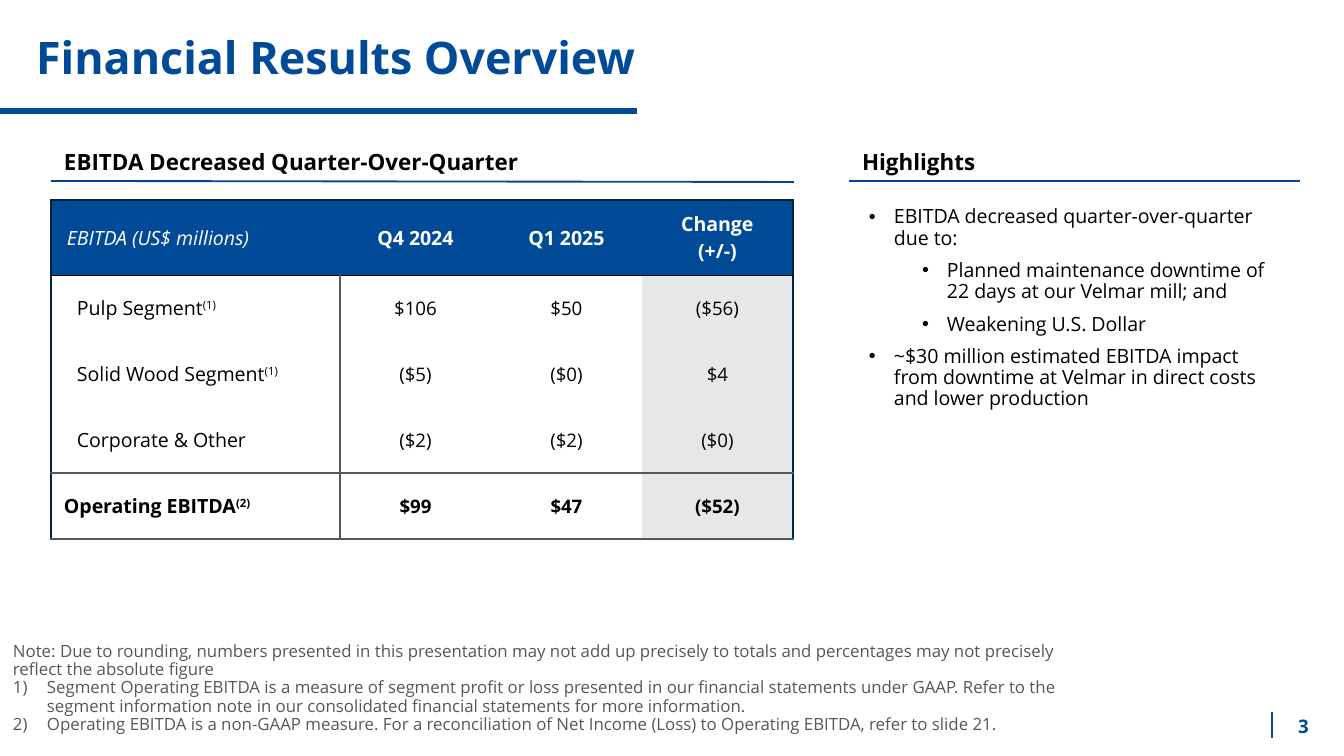
from lxml.etree import SubElement
from pptx import Presentation
from pptx.dml.color import RGBColor
from pptx.enum.shapes import MSO_CONNECTOR
from pptx.enum.text import MSO_ANCHOR, MSO_AUTO_SIZE, PP_ALIGN
from pptx.oxml.ns import qn
from pptx.util import Emu, Pt

FONT = "Open Sans"
BLUE, RULE, NAVY = "004A97", "004894", "00253D"
GREY, PALE, BLACK, WHITE = "555759", "E6E7E8", "000000", "FFFFFF"

HEAD = ["EBITDA (US$ millions)", "Q4 2024", "Q1 2025", "Change\n(+/-)"]
# label, footnote mark, values
ROWS = [
    ("Pulp Segment", "(1)", "$106", "$50", "($56)"),
    ("Solid Wood Segment", "(1)", "($5)", "($0)", "$4"),
    ("Corporate & Other", "", "($2)", "($2)", "($0)"),
    ("Operating EBITDA", "(2)", "$99", "$47", "($52)"),
]
POINTS = [
    (0, "EBITDA decreased quarter-over-quarter due to:"),
    (1, "Planned maintenance downtime of 22 days at our Velmar mill; and"),
    (1, "Weakening U.S. Dollar"),
    (0, "~$30 million estimated EBITDA impact from downtime at Velmar in direct "
        "costs and lower production"),
]
NOTE = ("Note: Due to rounding, numbers presented in this presentation may not add up "
        "precisely to totals and percentages may not precisely reflect the absolute figure")
NOTES = [
    "Segment Operating EBITDA is a measure of segment profit or loss presented in our "
    "financial statements under GAAP. Refer to the segment information note in our "
    "consolidated financial statements for more information.",
    "Operating EBITDA is a non-GAAP measure. For a reconciliation of Net Income (Loss) "
    "to Operating EBITDA, refer to slide 21.",
]


def px(n):
    return Emu(round(n * 914400 / 134.4))


def rgb(code):
    return RGBColor.from_string(code)


def style(para, size, color, bold=False, italic=False):
    font = para.font
    font.name, font.size = FONT, Pt(size)
    font.bold, font.italic = bold, italic
    font.color.rgb = rgb(color)


def place(shape, box):
    shape.left, shape.top, shape.width, shape.height = map(px, box)


def frame(shape, x=13, y=7, anchor=MSO_ANCHOR.TOP):
    """Set insets, wrapping and anchor, and return the text frame."""
    text = shape.text_frame
    text.word_wrap, text.auto_size = True, MSO_AUTO_SIZE.NONE
    text.margin_left = text.margin_right = px(x)
    text.margin_top = text.margin_bottom = px(y)
    text.vertical_anchor = anchor
    return text


def label(slide, box, words, size, color, bold=True, **inset):
    text = frame(slide.shapes.add_textbox(*map(px, box)), **inset)
    para = text.paragraphs[0]
    para.text = words
    style(para, size, color, bold)
    return text


def line(slide, start, end, color, width):
    item = slide.shapes.add_connector(MSO_CONNECTOR.STRAIGHT, *map(px, start + end))
    item.line.color.rgb, item.line.width = rgb(color), Pt(width)
    SubElement(item._element.spPr, qn("a:effectLst"))


def bullet(para, left, hang, color, kind, **attrs):
    props = para._p.get_or_add_pPr()
    props.set("marL", str(px(left)))
    props.set("indent", str(-px(hang)))
    SubElement(SubElement(props, qn("a:buClr")), qn("a:srgbClr"), val=color)
    SubElement(props, qn("a:buFont"), typeface="Arial" if kind == "buChar" else FONT)
    SubElement(props, qn("a:" + kind), **attrs)


def title(slide, box, words):
    x, y, w, h = box
    shape = slide.shapes.title
    place(shape, box)
    para = frame(shape, y=11).paragraphs[0]
    para.text, para.alignment = words, PP_ALIGN.LEFT
    style(para, 24, BLUE, True)
    line(slide, (0, y + 92), (637, y + 92), BLUE, 3)


def section(slide, box, words, drop=0):
    """Heading over a thin rule; drop lowers the rule's right end."""
    x, y, w, h = box
    label(slide, (x, y, w, h), words, 12, BLACK)
    line(slide, (x, y + h), (x + w, y + h + drop), RULE, 1)


def edge(props, side, pen):
    ln = SubElement(props, qn("a:ln" + side))
    if pen:
        color, width = pen
        ln.set("w", str(Pt(width)))
        SubElement(SubElement(ln, qn("a:solidFill")), qn("a:srgbClr"), val=color)
    else:
        ln.set("w", "0")
        SubElement(ln, qn("a:noFill"))


def borders(cell, row, col):
    navy, grey, thin = (NAVY, 1), (GREY, 1), (BLACK, 0.5)
    across = [navy, thin, None, None, grey, grey]
    down = [navy, grey if row else None, None, None, navy]
    props = cell._tc.get_or_add_tcPr()
    pens = (down[col], down[col + 1], across[row], across[row + 1])
    for side, pen in zip("LRTB", pens):
        edge(props, side, pen)


def fill(cell, row, col):
    if row == 0 or col > 1:
        cell.fill.solid()
        cell.fill.fore_color.rgb = rgb(BLUE if row == 0 else PALE if col == 3 else WHITE)
    else:
        cell.fill.background()


def results(slide, box):
    x, y, w, h = box
    count, first, top = len(ROWS), 289, 75
    table = slide.shapes.add_table(count + 1, 4, *map(px, box)).table
    table.first_row = table.horz_banding = False
    for i, col in enumerate(table.columns):
        col.width = px(first if i == 0 else (w - first) / 3)
    for i, row in enumerate(table.rows):
        row.height = px(top if i == 0 else (h - top) / count)

    grid = [HEAD] + [[name, *values] for name, _, *values in ROWS]
    for r, cells in enumerate(grid):
        for c, words in enumerate(cells):
            cell = table.cell(r, c)
            borders(cell, r, c)
            fill(cell, r, c)
            cell.margin_left = cell.margin_right = cell.margin_top = cell.margin_bottom = 0
            cell.vertical_anchor = MSO_ANCHOR.MIDDLE
            cell.text = words
            if c == 0:
                cell.margin_left = px(16 if r == 0 else 13 if r == count else 26)
                if r and ROWS[r - 1][1]:
                    run = cell.text_frame.paragraphs[0].add_run()
                    run.text = ROWS[r - 1][1]
                    run._r.get_or_add_rPr().set("baseline", "30000")
            for para in cell.text_frame.paragraphs:
                para.alignment = PP_ALIGN.CENTER if c else PP_ALIGN.LEFT
                style(para, 10 if r and c else 10.5, BLACK if r else WHITE,
                      bold=r == count or (r == 0 and c > 0), italic=r == c == 0)


def points(slide, box):
    shape = slide.placeholders[1]
    place(shape, box)
    text = frame(shape)
    for i, (level, words) in enumerate(POINTS):
        para = text.add_paragraph() if i else text.paragraphs[0]
        para.text, para.level = words, level
        bullet(para, 25 + 53 * level, 25, BLACK, "buChar", char="•")
        para.line_spacing, para.space_before, para.space_after = 0.9, Pt(0), Pt(6)
        style(para, 10.5, BLACK)


def notes(slide, box):
    text = label(slide, box, NOTE, 9, GREY, bold=False)
    for words in NOTES:
        para = text.add_paragraph()
        para.text = words
        bullet(para, 34, 34, GREY, "buAutoNum", type="arabicParenR")
        style(para, 9, GREY)
    for para in text.paragraphs:
        para.line_spacing = 0.9


def number(slide, box, words):
    x, y, w, h = box
    line(slide, (x, y + 5), (x, y + 31), BLUE, 0.75)
    text = label(slide, box, words, 10, BLUE, anchor=MSO_ANCHOR.MIDDLE)
    text.paragraphs[0].alignment = PP_ALIGN.CENTER


def main():
    deck = Presentation()
    deck.slide_width, deck.slide_height = px(1344), px(756)
    slide = deck.slides.add_slide(deck.slide_layouts[1])
    title(slide, (23, 19, 1230, 85), "Financial Results Overview")
    section(slide, (51, 141, 743, 40), "EBITDA Decreased Quarter-Over-Quarter", drop=1)
    results(slide, (51, 200, 742, 339))
    section(slide, (849, 141, 451, 40), "Highlights")
    points(slide, (856, 200, 445, 238))
    notes(slide, (0, 636, 1097, 119))
    number(slide, (1272, 707, 63, 38), "3")
    deck.save("out.pptx")


if __name__ == "__main__":
    main()
